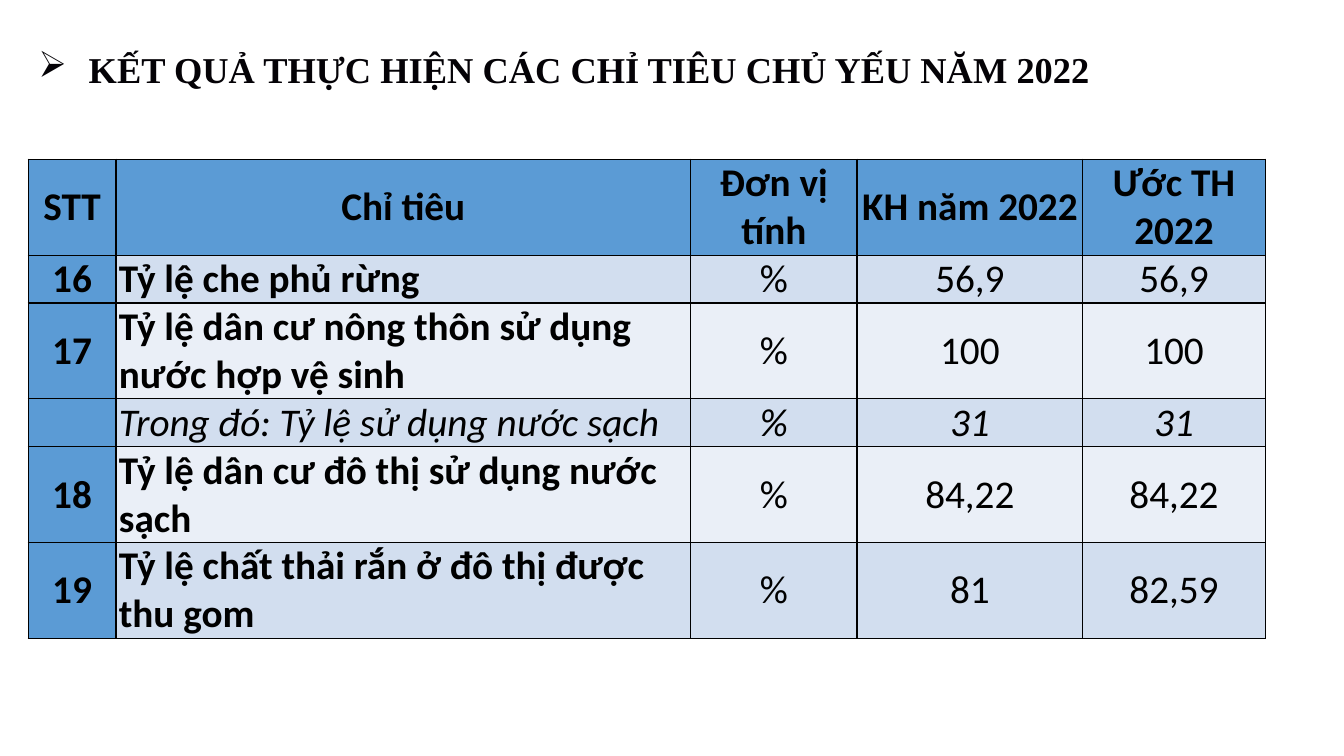
from lxml import etree
from pptx import Presentation
from pptx import util as u
from pptx.dml.color import RGBColor
from pptx.enum import text
from pptx.oxml import ns

# Content
TITLE = "KẾT QUẢ THỰC HIỆN CÁC CHỈ TIÊU CHỦ YẾU NĂM 2022"
HEADER = ("STT", "Chỉ tiêu", "Đơn vị tính", "KH năm 2022", "Ước TH 2022")
INDICATORS = [
    ("16", "Tỷ lệ che phủ rừng", "%", "56,9", "56,9"),
    ("17", "Tỷ lệ dân cư nông thôn sử dụng nước hợp vệ sinh", "%", "100", "100"),
    ("", "Trong đó: Tỷ lệ sử dụng nước sạch", "%", "31", "31"),
    ("18", "Tỷ lệ dân cư đô thị sử dụng nước sạch", "%", "84,22", "84,22"),
    ("19", "Tỷ lệ chất thải rắn ở đô thị được thu gom", "%", "81", "82,59"),
]

# Layout in inches
LEFT, TABLE_TOP = 0.28, 1.58
COLUMNS = (0.87, 5.7, 1.65, 2.24, 1.81)
LINE = 0.467
ROW_LINES = (2, 1, 2, 1, 2, 2)

BLACK = RGBColor(0x00, 0x00, 0x00)
TITLE_INK = RGBColor(0x04, 0x02, 0x06)
BLUE = RGBColor(0x5B, 0x9B, 0xD5)
BANDS = (RGBColor(0xD2, 0xDE, 0xEF), RGBColor(0xEA, 0xEF, 0xF7))


def write(frame, words, size, font="Calibri", color=BLACK, bold=False,
          italic=False, align=text.PP_ALIGN.CENTER):
    para = frame.paragraphs[0]
    para.alignment = align
    if words:
        span = para.add_run()
        span.text = words
        span.font.size, span.font.name = u.Pt(size), font
        span.font.bold, span.font.italic = bold, italic
        span.font.color.rgb = color
    return para


def add_borders(cell):
    props = cell._tc.get_or_add_tcPr()
    for side in ("lnL", "lnR", "lnT", "lnB"):
        line = etree.SubElement(props, ns.qn(f"a:{side}"), w=str(u.Pt(1)))
        fill = etree.SubElement(line, ns.qn("a:solidFill"))
        etree.SubElement(fill, ns.qn("a:srgbClr"), val=str(BLACK))


deck = Presentation()
deck.slide_width, deck.slide_height = u.Inches(13.33), u.Inches(7.5)
page = deck.slides.add_slide(deck.slide_layouts[5])

# Title with an arrow bullet
title = page.shapes.title
title.left, title.top = u.Inches(LEFT), u.Inches(0.42)
title.width, title.height = u.Inches(12.78), u.Inches(0.54)
title.text_frame.auto_size = text.MSO_AUTO_SIZE.NONE
title.text_frame.vertical_anchor = text.MSO_ANCHOR.TOP
heading = write(title.text_frame, TITLE, 26, font="Times New Roman",
                color=TITLE_INK, bold=True, align=text.PP_ALIGN.LEFT)
heading_props = heading._p.get_or_add_pPr()
heading_props.set("marL", str(u.Inches(0.5)))
heading_props.set("indent", str(u.Inches(-0.5)))
etree.SubElement(heading_props, ns.qn("a:buChar"), char="➢")

# Table grid
rows = [HEADER, *INDICATORS]
table = page.shapes.add_table(
    len(rows), len(COLUMNS), u.Inches(LEFT), u.Inches(TABLE_TOP),
    u.Inches(sum(COLUMNS)), u.Inches(LINE * sum(ROW_LINES))).table
for column, width in zip(table.columns, COLUMNS):
    column.width = u.Inches(width)
for row, lines in zip(table.rows, ROW_LINES):
    row.height = u.Inches(LINE * lines)

# Cells: blue header and number column, banded body, italic sub-indicator
for r, values in enumerate(rows):
    sub_indicator = not values[0]
    for c, value in enumerate(values):
        cell = table.cell(r, c)
        cell.margin_left = cell.margin_right = u.Inches(0.03)
        cell.margin_top = cell.margin_bottom = 0
        cell.vertical_anchor = text.MSO_ANCHOR.MIDDLE
        add_borders(cell)
        cell.fill.solid()
        cell.fill.fore_color.rgb = BLUE if r == 0 or c == 0 else BANDS[(r - 1) % 2]
        left_aligned = r > 0 and c == 1
        write(cell.text_frame, value, 28,
              bold=r == 0 or (c < 2 and not sub_indicator), italic=sub_indicator,
              align=text.PP_ALIGN.LEFT if left_aligned else text.PP_ALIGN.CENTER)

deck.save("out.pptx")
